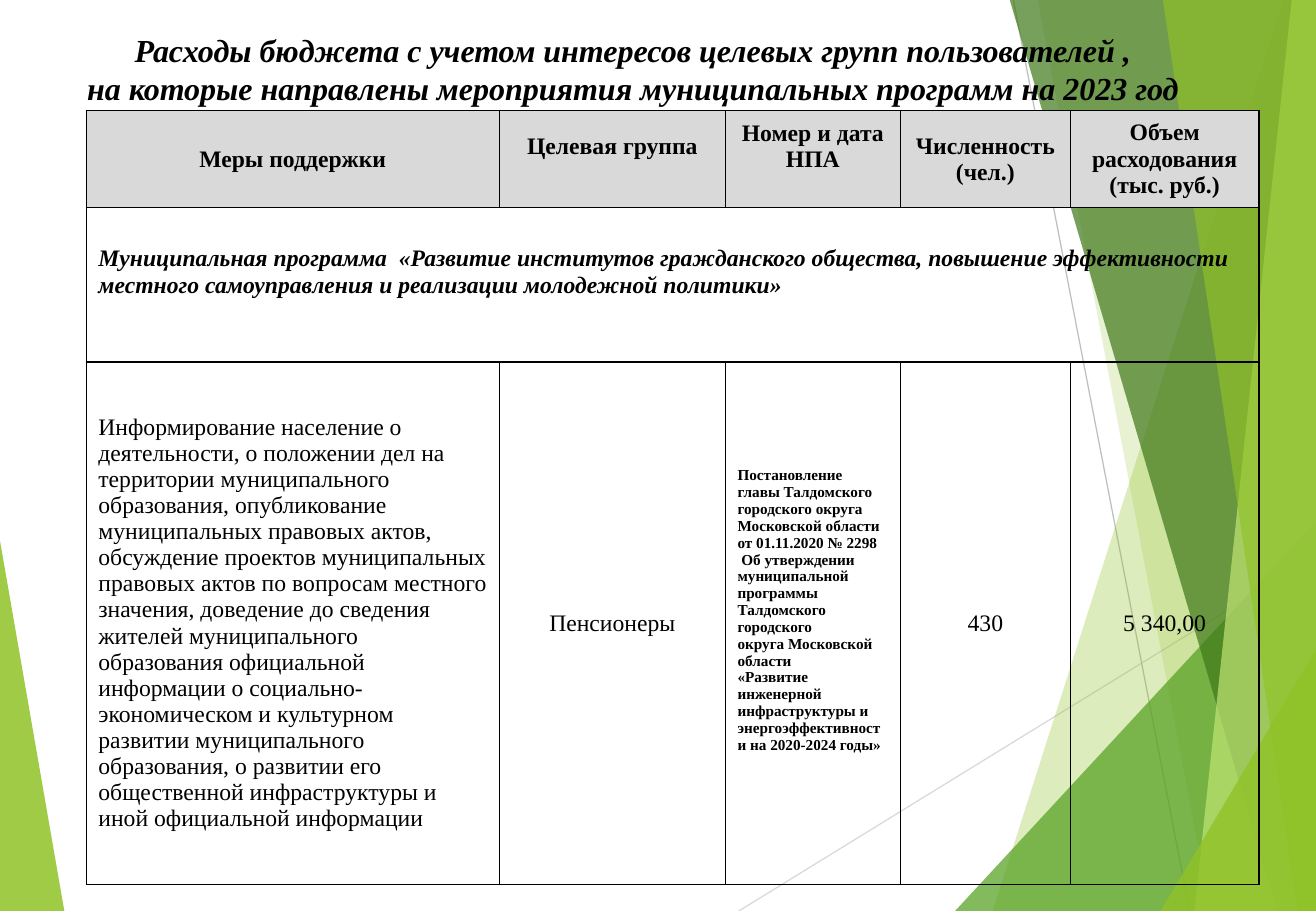
from dataclasses import dataclass

from lxml import etree
from pptx import Presentation
from pptx.dml.color import RGBColor
from pptx.enum.shapes import MSO_CONNECTOR
from pptx.enum.text import MSO_ANCHOR, MSO_AUTO_SIZE, PP_ALIGN
from pptx.oxml.ns import qn
from pptx.slide import Slide
from pptx.table import _Cell as Cell
from pptx.text.text import TextFrame
from pptx.util import Inches, Pt

FONT = "Times New Roman"
BLACK = RGBColor(0x00, 0x00, 0x00)
HEADER_GRAY = RGBColor(0xD9, 0xD9, 0xD9)
LINE_GRAY = RGBColor(0xBF, 0xBF, 0xBF)
LIME = RGBColor(0x90, 0xC2, 0x26)
GREEN = RGBColor(0x54, 0xA0, 0x21)
DARK_GREEN = RGBColor(0x3F, 0x78, 0x19)
PALE_LIME = RGBColor(0xC0, 0xE4, 0x74)

WIDTH, HEIGHT = 10.83, 7.5
Point = tuple[float, float]
TOP_RIGHT: Point = (WIDTH, 0)
BOTTOM_RIGHT: Point = (WIDTH, HEIGHT)


@dataclass
class Facet:
    points: list[Point]
    color: RGBColor
    opacity: int


@dataclass
class Ray:
    start: Point
    end: Point
    color: RGBColor


@dataclass
class Entry:
    text: str
    size: float = 14
    bold: bool = False
    italic: bool = False
    alignment: PP_ALIGN = PP_ALIGN.CENTER
    extra_bottom: float = 0
    columns: int = 1


DECORATION: list[Facet | Ray] = [
    Facet([(0, 4.45), (0.53, HEIGHT), (0, HEIGHT)], LIME, 85),
    Ray((6.08, HEIGHT), (10.84, 4.57), HEADER_GRAY),
    Ray((8.34, 0), (9.79, HEIGHT), LINE_GRAY),
    Facet([(10.56, 0), (8.17, HEIGHT), BOTTOM_RIGHT, TOP_RIGHT], LIME, 30),
    Facet([(8.54, 0), (9.96, HEIGHT), BOTTOM_RIGHT, TOP_RIGHT], LIME, 20),
    Facet([(7.86, HEIGHT), (WIDTH, 4.29), BOTTOM_RIGHT], GREEN, 72),
    Facet([(8.31, 0), (10.51, HEIGHT), BOTTOM_RIGHT, TOP_RIGHT], DARK_GREEN, 70),
    Facet([(10.63, 0), (9.83, HEIGHT), BOTTOM_RIGHT, TOP_RIGHT], PALE_LIME, 70),
    Facet([(9.57, 0), (10.68, HEIGHT), BOTTOM_RIGHT, TOP_RIGHT], LIME, 65),
    Facet([(9.55, HEIGHT), (WIDTH, 5.35), BOTTOM_RIGHT], LIME, 80),
]

TITLE = (
    "Расходы бюджета с учетом интересов целевых групп пользователей ,\n"
    " на которые направлены мероприятия муниципальных программ на 2023 год "
)
PROGRAM = (
    "Муниципальная программа  «Развитие институтов гражданского общества, "
    "повышение эффективности местного самоуправления и реализации молодежной политики»"
)
MEASURE = (
    "Информирование население о деятельности, о положении дел на территории "
    "муниципального образования, опубликование муниципальных правовых актов, "
    "обсуждение проектов муниципальных правовых актов по вопросам местного значения, "
    "доведение до сведения жителей муниципального образования официальной информации "
    "о социально-экономическом и культурном развитии муниципального образования, "
    "о развитии его общественной инфраструктуры и иной официальной информации"
)
DECREE = (
    "Постановление главы Талдомского городского округа Московской области "
    "от 01.11.2020 № 2298\n"
    " Об утверждении муниципальной\n"
    "программы Талдомского городского\n"
    "округа Московской области\n"
    "«Развитие инженерной\n"
    "инфраструктуры и энергоэффективности на 2020-2024 годы»"
)

COLUMN_WIDTHS = [3.4, 1.86, 1.44, 1.4, 1.55]
ROW_HEIGHTS = [0.8, 1.27, 4.3]
ROWS = [
    [
        Entry("Меры поддержки", bold=True),
        Entry("Целевая группа", bold=True, extra_bottom=0.21),
        Entry("Номер и дата НПА", bold=True, extra_bottom=0.21),
        Entry("Численность (чел.)", bold=True),
        Entry("Объем расходования (тыс. руб.)", bold=True),
    ],
    [
        Entry(PROGRAM, bold=True, italic=True, alignment=PP_ALIGN.LEFT,
              extra_bottom=0.21, columns=len(COLUMN_WIDTHS)),
    ],
    [
        Entry(MEASURE, alignment=PP_ALIGN.LEFT),
        Entry("Пенсионеры"),
        Entry(DECREE, size=9, bold=True, alignment=PP_ALIGN.LEFT, extra_bottom=0.21),
        Entry("430"),
        Entry("5 340,00"),
    ],
]


def write_text(text_frame: TextFrame, entry: Entry) -> None:
    text_frame.text = entry.text
    for paragraph in text_frame.paragraphs:
        paragraph.alignment = entry.alignment
        for run in paragraph.runs:
            run.font.name = FONT
            run.font.size = Pt(entry.size)
            run.font.bold = entry.bold
            run.font.italic = entry.italic
            run.font.color.rgb = BLACK


def draw_facet(slide: Slide, facet: Facet) -> None:
    points = [(Inches(x), Inches(y)) for x, y in facet.points]
    builder = slide.shapes.build_freeform(*points[0])
    builder.add_line_segments(points[1:], close=True)
    shape = builder.convert_to_shape()
    shape.shadow.inherit = False
    shape.line.fill.background()
    shape.fill.solid()
    shape.fill.fore_color.rgb = facet.color
    color = shape.element.spPr.find(qn("a:solidFill"))[0]
    etree.SubElement(color, qn("a:alpha"), val=str(facet.opacity * 1000))


def draw_ray(slide: Slide, ray: Ray) -> None:
    ends = [Inches(value) for value in (*ray.start, *ray.end)]
    connector = slide.shapes.add_connector(MSO_CONNECTOR.STRAIGHT, *ends)
    connector.line.color.rgb = ray.color
    connector.line.width = Pt(0.75)
    etree.SubElement(connector.element.spPr, qn("a:effectLst"))


def draw_title(slide: Slide) -> None:
    title = slide.shapes.title
    title.left, title.top = Inches(0.41), Inches(0.25)
    title.width, title.height = Inches(9.6), Inches(0.66)
    text_frame = title.text_frame
    text_frame.margin_left = text_frame.margin_right = 0
    text_frame.margin_top = text_frame.margin_bottom = 0
    text_frame.vertical_anchor = MSO_ANCHOR.TOP
    text_frame.auto_size = MSO_AUTO_SIZE.NONE
    text_frame.word_wrap = True
    write_text(text_frame, Entry(TITLE, size=19, bold=True, italic=True))
    for paragraph in text_frame.paragraphs:
        paragraph.line_spacing = 1.0
        paragraph.space_before = paragraph.space_after = Pt(0)
    title.element.getparent().append(title.element)


def add_borders(cell: Cell) -> None:
    properties = cell._tc.get_or_add_tcPr()
    for side in ("lnL", "lnR", "lnT", "lnB"):
        border = etree.SubElement(properties, qn(f"a:{side}"), w=str(Pt(1)))
        fill = etree.SubElement(border, qn("a:solidFill"))
        etree.SubElement(fill, qn("a:srgbClr"), val=str(BLACK))


def draw_table(slide: Slide) -> None:
    table = slide.shapes.add_table(
        len(ROW_HEIGHTS), len(COLUMN_WIDTHS), Inches(0.71), Inches(0.91),
        Inches(sum(COLUMN_WIDTHS)), Inches(sum(ROW_HEIGHTS)),
    ).table
    table.first_row = table.horz_banding = False
    for column, width in zip(table.columns, COLUMN_WIDTHS):
        column.width = Inches(width)
    for row, height in zip(table.rows, ROW_HEIGHTS):
        row.height = Inches(height)
    for cell in table.iter_cells():
        add_borders(cell)
        cell.fill.background()
    for row_index, entries in enumerate(ROWS):
        for column_index, entry in enumerate(entries):
            cell = table.cell(row_index, column_index)
            if entry.columns > 1:
                cell.merge(table.cell(row_index, column_index + entry.columns - 1))
            if row_index == 0:
                cell.fill.solid()
                cell.fill.fore_color.rgb = HEADER_GRAY
            cell.vertical_anchor = MSO_ANCHOR.MIDDLE
            cell.margin_bottom = Inches(0.05 + entry.extra_bottom)
            write_text(cell.text_frame, entry)


def main() -> None:
    presentation = Presentation()
    presentation.slide_width, presentation.slide_height = Inches(WIDTH), Inches(HEIGHT)
    slide = presentation.slides.add_slide(presentation.slide_layouts[5])
    for item in DECORATION:
        if isinstance(item, Facet):
            draw_facet(slide, item)
        else:
            draw_ray(slide, item)
    draw_title(slide)
    draw_table(slide)
    presentation.save("out.pptx")


if __name__ == "__main__":
    main()
